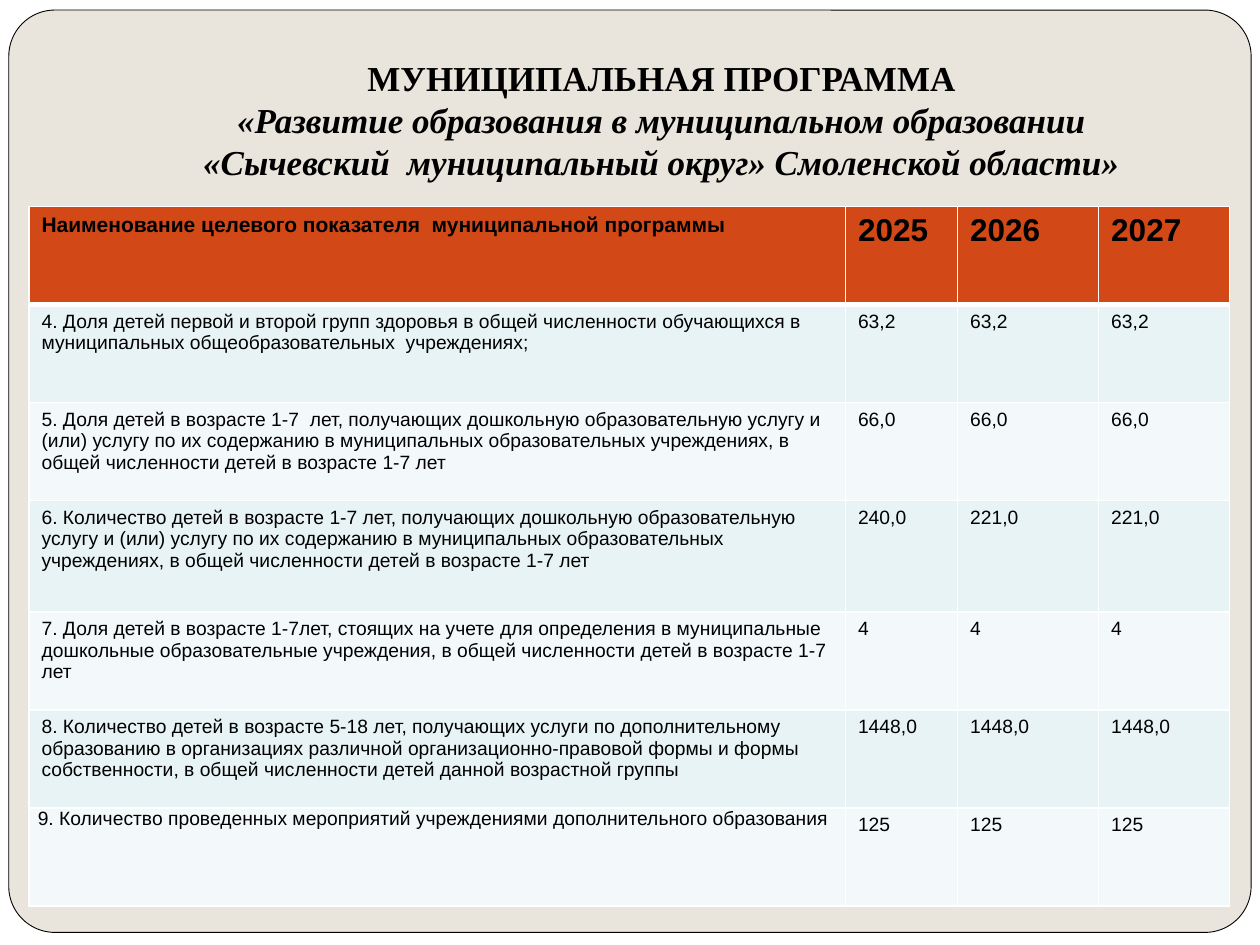
from pptx import Presentation
from pptx import util as u
from pptx.dml.color import RGBColor
from pptx.enum import shapes, text
from pptx.oxml import parse_xml
from pptx.oxml.ns import nsdecls

COLORS = {"page": "FFFFFF", "card": "E9E5DC", "ink": "000000", "header": "D34817",
          "odd": "E7F3F4", "even": "F3F9FA", "border": "FFFFFF"}
WIDTH, HEIGHT = u.Inches(10), u.Inches(7.5)
COLUMNS = [6.48, 0.89, 1.12, 1.04]
ROWS = [0.78, 0.78, 0.78, 0.89, 0.78, 0.78, 0.78]
TITLE = [
    ("МУНИЦИПАЛЬНАЯ ПРОГРАММА", False),
    ("«Развитие образования в муниципальном образовании", True),
    ("«Сычевский  муниципальный округ» Смоленской области»", True),
]
INDICATORS = [
    ("Наименование целевого показателя  муниципальной программы", "2025", "2026", "2027"),
    ("4. Доля детей первой и второй групп здоровья в общей численности обучающихся в "
     "муниципальных общеобразовательных  учреждениях;", "63,2", "63,2", "63,2"),
    ("5. Доля детей в возрасте 1-7  лет, получающих дошкольную образовательную услугу и "
     "(или) услугу по их содержанию в муниципальных образовательных учреждениях, в общей "
     "численности детей в возрасте 1-7 лет", "66,0", "66,0", "66,0"),
    ("6. Количество детей в возрасте 1-7 лет, получающих дошкольную образовательную услугу и "
     "(или) услугу по их содержанию в муниципальных образовательных учреждениях, в общей "
     "численности детей в возрасте 1-7 лет", "240,0", "221,0", "221,0"),
    ("7. Доля детей в возрасте 1-7лет, стоящих на учете для определения в муниципальные "
     "дошкольные образовательные учреждения, в общей численности детей в возрасте 1-7 лет",
     "4", "4", "4"),
    ("8. Количество детей в возрасте 5-18 лет, получающих услуги по дополнительному "
     "образованию в организациях различной организационно-правовой формы и формы "
     "собственности, в общей численности детей данной возрастной группы",
     "1448,0", "1448,0", "1448,0"),
    ("9. Количество проведенных мероприятий учреждениями дополнительного образования",
     "125", "125", "125"),
]


def rgb(name):
    """Return the named colour."""
    return RGBColor.from_string(COLORS[name])


def box(left, top, width, height):
    """Turn inches into a placement tuple."""
    return tuple(u.Inches(v) for v in (left, top, width, height))


def style_font(font, name, size, bold):
    """Apply the typeface, size, weight and ink colour."""
    font.name, font.size, font.bold = name, u.Pt(size), bold
    font.color.rgb = rgb("ink")


def add_card(s, area):
    """Draw the rounded panel behind all other parts."""
    s.background.fill.solid()
    s.background.fill.fore_color.rgb = rgb("page")
    sp = s.shapes.add_shape(shapes.MSO_SHAPE.ROUNDED_RECTANGLE, *area)
    sp.adjustments[0] = 0.05
    sp.shadow.inherit = False
    sp.fill.solid()
    sp.fill.fore_color.rgb = rgb("card")
    sp.line.color.rgb = rgb("ink")
    sp.line.width = u.Pt(0.5)
    s.shapes._spTree.insert(2, sp._element)


def add_title(s, area):
    """Place and fill the title placeholder."""
    sp = s.shapes.title
    sp.left, sp.top, sp.width, sp.height = area
    tf = sp.text_frame
    tf.word_wrap = True
    tf.auto_size = text.MSO_AUTO_SIZE.NONE
    tf.vertical_anchor = text.MSO_ANCHOR.BOTTOM
    tf.margin_bottom = u.Inches(0.1)
    p = tf.paragraphs[0]
    p.alignment = text.PP_ALIGN.CENTER
    style_font(p.font, "Times New Roman", 20, True)
    for i, (line, italic) in enumerate(TITLE):
        if i:
            p.add_line_break()
        r = p.add_run()
        r.text = line
        style_font(r.font, "Times New Roman", 20, True)
        r.font.italic = italic


def add_borders(cell, **points):
    """Draw the cell's four borders, given their widths in points."""
    for side in "LRTB":
        cell._tc.get_or_add_tcPr().append(parse_xml(
            f'<a:ln{side} {nsdecls("a")} w="{u.Pt(points.get(side, 1))}"><a:solidFill>'
            f'<a:srgbClr val="{COLORS["border"]}"/></a:solidFill></a:ln{side}>'))


def fill_cell(cell, value, row, column):
    """Write and format one table cell."""
    header = row == 0
    add_borders(cell, T=3 if row == 1 else 1, B=3 if header else 1)
    cell.fill.solid()
    cell.fill.fore_color.rgb = rgb("header" if header else "odd" if row % 2 else "even")
    cell.text = value
    size = (18 if column else 12) if header else 11
    style_font(cell.text_frame.paragraphs[0].font, "Arial", size, header)


def add_indicators(s, area):
    """Build the table of target indicators."""
    table = s.shapes.add_table(len(ROWS), len(COLUMNS), *area).table
    for column, share in zip(table.columns, COLUMNS):
        column.width = int(area[2] * share / sum(COLUMNS))
    for row, share in zip(table.rows, ROWS):
        row.height = int(area[3] * share / sum(ROWS))
    for i, values in enumerate(INDICATORS):
        for j, value in enumerate(values):
            fill_cell(table.cell(i, j), value, i, j)
    last = table.cell(len(ROWS) - 1, 0)
    last.margin_left = last.margin_right = u.Inches(0.07)
    last.margin_top = last.margin_bottom = 0


def main():
    """Build and save the slide."""
    prs = Presentation()
    prs.slide_width, prs.slide_height = WIDTH, HEIGHT
    s = prs.slides.add_slide(prs.slide_layouts[5])
    add_card(s, box(0.07, 0.08, 9.86, 7.32))
    add_title(s, box(1, 0.3, 8.5, 1.25))
    add_indicators(s, box(0.23, 1.64, 9.53, 5.55))
    prs.save("out.pptx")


if __name__ == "__main__":
    main()
